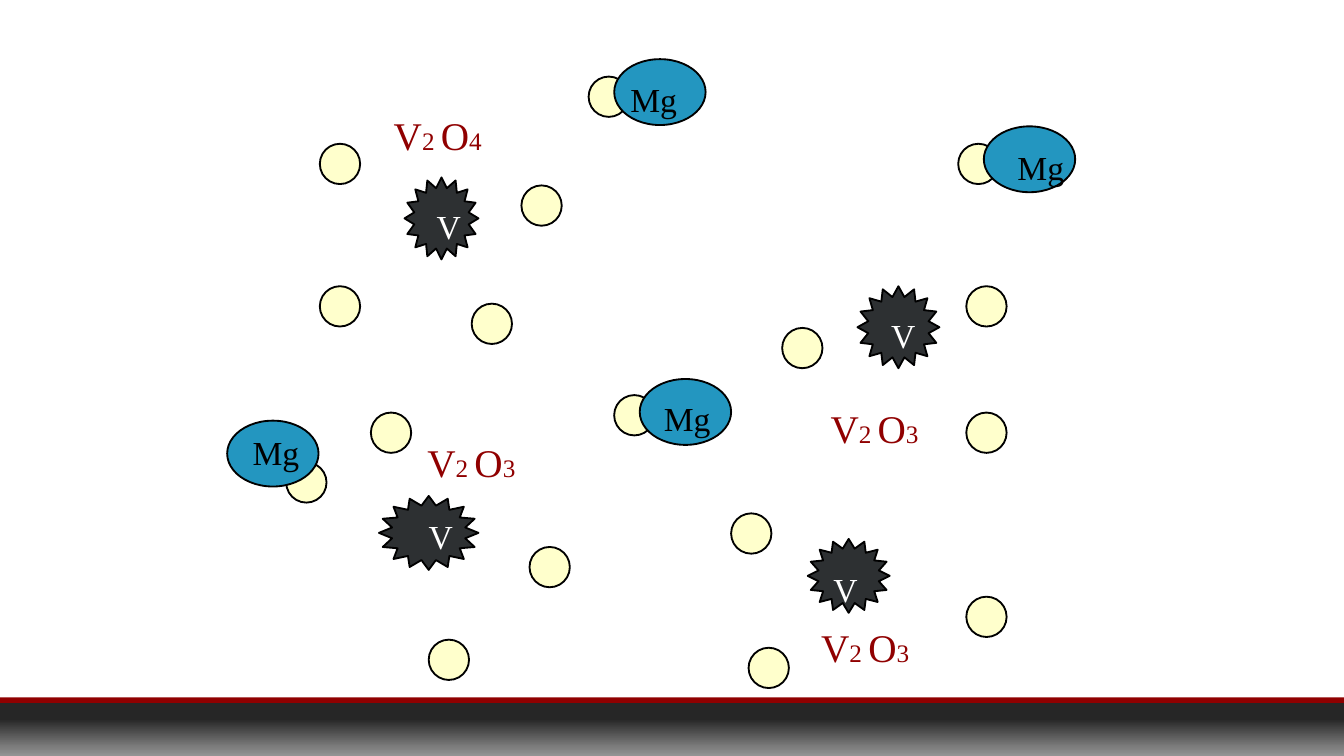
from copy import deepcopy
from typing import NamedTuple

from pptx import Presentation
from pptx.dml.color import RGBColor
from pptx.enum.shapes import MSO_SHAPE as Shape
from pptx.enum.text import MSO_AUTO_SIZE as AutoSize
from pptx.oxml.ns import qn
from pptx.util import Emu, Pt

PX = 9144  # EMU per px, 100 px to the inch
FONT = "Times New Roman"
BLACK = RGBColor(0x00, 0x00, 0x00)
WHITE = RGBColor(0xFF, 0xFF, 0xFF)
RED = RGBColor(0x90, 0x00, 0x00)
CHARCOAL = RGBColor(0x2D, 0x30, 0x32)
CREAM = RGBColor(0xFF, 0xFF, 0xCC)
BLUE = RGBColor(0x23, 0x96, 0xC0)
BAND_STOPS = [(0.30, RGBColor(0x26, 0x26, 0x26)),
              (0.83, RGBColor(0x7E, 0x7E, 0x7E)),
              (1.00, RGBColor(0x96, 0x96, 0x96))]


class Box(NamedTuple):
    x: int
    y: int
    w: int
    h: int


class Atom(NamedTuple):
    body: Box
    label: Box
    wrap: bool = False


class Oxide(NamedTuple):
    x: int
    y: int
    oxygens: str


VANADIUM = [
    Atom(Box(282, 369, 74, 55), Box(311, 380, 34, 38)),
    Atom(Box(301, 132, 55, 61), Box(317, 149, 34, 38)),
    Atom(Box(638, 213, 61, 61), Box(655, 230, 34, 38)),
    Atom(Box(601, 401, 61, 55), Box(612, 419, 62, 38), wrap=True),
]
MAGNESIUM = [
    Atom(Box(169, 313, 68, 49), Box(180, 317, 52, 38)),
    Atom(Box(457, 44, 68, 49), Box(461, 55, 52, 38)),
    Atom(Box(732, 94, 68, 49), Box(749, 105, 52, 38)),
    Atom(Box(476, 282, 68, 49), Box(486, 292, 52, 38)),
]
OXYGEN_SIZE = 30
OXYGEN = [
    (213, 344), (719, 307), (238, 107), (276, 307), (713, 107), (719, 213),
    (394, 407), (719, 444), (557, 482), (582, 244), (544, 382), (351, 226),
    (319, 476), (238, 213), (438, 57), (457, 294), (388, 138),
]
OXIDES = [Oxide(603, 460, "3"), Oxide(610, 297, "3"),
          Oxide(285, 79, "4"), Oxide(310, 322, "3")]


def px(n: int) -> Emu:
    return Emu(n * PX)


def add_shape(slide, kind: Shape, box: Box, fill: RGBColor | None = None,
              line: RGBColor | None = None):
    sp = slide.shapes.add_shape(kind, *map(px, box))
    sp.shadow.inherit = False
    if fill is not None:
        sp.fill.solid()
        sp.fill.fore_color.rgb = fill
    if line is None:
        sp.line.fill.background()
    else:
        sp.line.color.rgb = line
        sp.line.width = Pt(1)
    return sp


def add_text(slide, box: Box, *runs: tuple[str, float],
             color: RGBColor, wrap: bool = False) -> None:
    tf = slide.shapes.add_textbox(*map(px, box)).text_frame
    tf.margin_left = tf.margin_right = px(8)
    tf.margin_top = tf.margin_bottom = px(4)
    tf.word_wrap = wrap
    tf.auto_size = AutoSize.SHAPE_TO_FIT_TEXT
    for text, size in runs:
        r = tf.paragraphs[0].add_run()
        r.text = text
        r.font.name = FONT
        r.font.size = Pt(size)
        r.font.color.rgb = color


def add_footer(slide) -> None:
    add_shape(slide, Shape.RECTANGLE, Box(0, 519, 1000, 4), RED)
    sp = add_shape(slide, Shape.RECTANGLE, Box(0, 523, 1000, 40))
    sp.fill.gradient()
    sp.fill.gradient_angle = 270
    # The default gradient has two stops; the band needs a third
    stops = sp._element.spPr.find(qn("a:gradFill")).find(qn("a:gsLst"))
    stops.append(deepcopy(stops[-1]))
    for stop, (position, color) in zip(sp.fill.gradient_stops, BAND_STOPS):
        stop.position = position
        stop.color.rgb = color


def add_labels(slide, atoms: list[Atom], symbol: str, color: RGBColor) -> None:
    for atom in atoms:
        add_text(slide, atom.label, (symbol, 18), color=color, wrap=atom.wrap)


def main() -> None:
    prs = Presentation()
    prs.slide_width = px(1000)
    prs.slide_height = prs.slide_width * 9 // 16
    s = prs.slides.add_slide(prs.slide_layouts[6])

    add_footer(s)

    # Vanadium stars
    for atom in VANADIUM:
        sp = add_shape(s, Shape.STAR_16_POINT, atom.body, CHARCOAL, BLACK)
        sp.adjustments[0] = 0.375
    add_labels(s, VANADIUM, "V", WHITE)

    # Oxygen circles, partly behind the magnesium
    for x, y in OXYGEN:
        add_shape(s, Shape.OVAL, Box(x, y, OXYGEN_SIZE, OXYGEN_SIZE), CREAM, BLACK)

    # Magnesium ovals
    for atom in MAGNESIUM:
        add_shape(s, Shape.OVAL, atom.body, BLUE, BLACK)
    add_labels(s, MAGNESIUM, "Mg", BLACK)

    # Oxide formulas
    for oxide in OXIDES:
        add_text(s, Box(oxide.x, oxide.y, 83, 43), ("V", 21), ("2 ", 13.5),
                 ("O", 21), (oxide.oxygens, 13.5), color=RED)

    prs.save("out.pptx")


if __name__ == "__main__":
    main()
